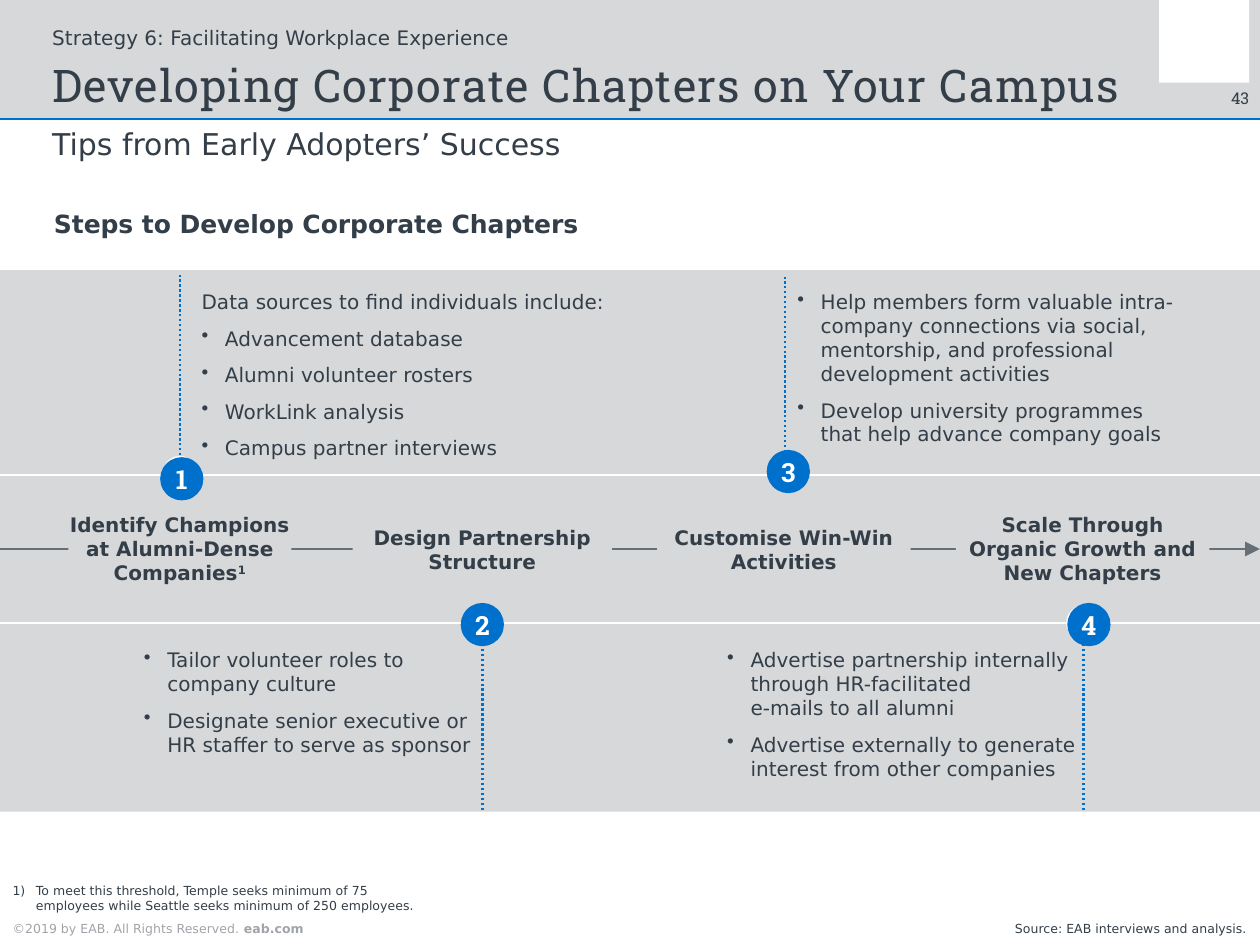
from pptx import Presentation
from pptx.dml.color import RGBColor
from pptx.enum.dml import MSO_LINE
from pptx.enum.shapes import MSO_CONNECTOR, MSO_SHAPE
from pptx.enum.text import MSO_ANCHOR, PP_ALIGN
from pptx.oxml.ns import qn
from pptx.util import Inches, Pt
from lxml import etree

RECT, OVAL = MSO_SHAPE.RECTANGLE, MSO_SHAPE.OVAL
LEFT, MID, RIGHT = PP_ALIGN.LEFT, PP_ALIGN.CENTER, PP_ALIGN.RIGHT
TOP, CENTER, BOTTOM = MSO_ANCHOR.TOP, MSO_ANCHOR.MIDDLE, MSO_ANCHOR.BOTTOM
DOTS = MSO_LINE.ROUND_DOT

THEME = {
    "sans": "DejaVu Sans", "slab": "Roboto Slab",
    "ink": "333E48", "blue": "0070CD", "gray": "D6D8DA",
    "rule": "666E76", "pale": "A0A4A9", "white": "FFFFFF",
    "tiny": 5, "page": 6.5, "body": 8, "head": 10, "badge": 10.6,
    "sub": 12, "title": 18,
}
W, H = 7, 5.25
BAND = (1.5, 3.01)
RULES = (2.64, 3.46)
AXIS = 3.05
BADGE, HALO = 0.24, 0.18
HANG = 0.13

# Each step: label runs (text, superscript), label box, badge corner,
# halo corner, dotted line (x, from, to), detail box, details (text, bullet)
STEPS = [
    {"label": [("Identify Champions\vat Alumni-Dense Companies", False), ("1", True)],
     "box": (0.38, 2.85, 1.24, 0.4), "badge": (0.89, 2.54), "halo": (0.91, 2.54),
     "stem": (1, 2.53, 1.53), "area": (1.12, 1.61, 2.3, 0.95),
     "notes": [("Data sources to find individuals include:", None),
               ("Advancement database", "•"), ("Alumni volunteer rosters", "•"),
               ("WorkLink analysis", "•"), ("Campus partner interviews", "•")]},
    {"label": [("Design Partnership Structure", False)],
     "box": (1.96, 2.92, 1.44, 0.27), "badge": (2.56, 3.35), "halo": (2.59, 3.37),
     "stem": (2.68, 4.5, 3.5), "area": (0.8, 3.6, 1.87, 0.61),
     "notes": [("Tailor volunteer roles to company culture", "•"),
               ("Designate senior executive or HR staffer to serve as sponsor", "•")]},
    {"label": [("Customise Win-Win Activities", False)],
     "box": (3.65, 2.92, 1.41, 0.27), "badge": (4.26, 2.5), "halo": (4.27, 2.54),
     "stem": (4.36, 2.54, 1.54), "area": (4.43, 1.61, 2.17, 0.88),
     "notes": [("Help members form valuable intra-company connections via social, "
                "mentorship, and professional development activities", "•"),
               ("Develop university programmes that help advance company goals", "•")]},
    {"label": [("Scale Through Organic Growth and New Chapters", False)],
     "box": (5.31, 2.85, 1.41, 0.4), "badge": (5.93, 3.35), "halo": (5.93, 3.37),
     "stem": (6.02, 4.5, 3.5), "area": (4.04, 3.6, 1.94, 0.74),
     "notes": [("Advertise partnership internally through HR-facilitated\v"
                "e-mails to all alumni", "•"),
               ("Advertise externally to generate interest from other companies", "•")]},
]

deck = Presentation()
deck.slide_width, deck.slide_height = Inches(W), Inches(H)
slide = deck.slides.add_slide(deck.slide_layouts[6])
shapes = slide.shapes


def rgb(name):
    return RGBColor.from_string(THEME[name])


def frame(shape, anchor=TOP, pad=(0, 0, 0, 0)):
    body = shape.text_frame
    body.word_wrap = True
    body.vertical_anchor = anchor
    (body.margin_left, body.margin_top,
     body.margin_right, body.margin_bottom) = [Inches(v) for v in pad]
    return body


def style(para, size="body", color="ink", face="sans", bold=False, align=LEFT):
    para.alignment = align
    font = para.font
    font.name, font.size, font.bold = THEME[face], Pt(THEME[size]), bold
    font.color.rgb = rgb(color)


def bullet(para, mark):
    props = para._p.get_or_add_pPr()
    props.set("marL", str(Inches(HANG)))
    props.set("indent", str(-Inches(HANG)))
    if mark == "1)":
        etree.SubElement(props, qn("a:buAutoNum"), type="arabicParenR")
    elif mark:
        etree.SubElement(props, qn("a:buChar"), char=mark)


def text(box, words, anchor=TOP, pad=(0, 0, 0, 0), mark=None, **look):
    shape = shapes.add_textbox(*[Inches(v) for v in box])
    para = frame(shape, anchor, pad).paragraphs[0]
    para.text = words
    if mark:
        bullet(para, mark)
    style(para, **look)
    return para


def block(kind, box, fill, edge=None):
    shape = shapes.add_shape(kind, *[Inches(v) for v in box])
    shape.shadow.inherit = False
    shape.fill.solid()
    shape.fill.fore_color.rgb = rgb(fill)
    if edge:
        shape.line.color.rgb = rgb(edge)
        shape.line.width = Pt(1)
    else:
        shape.line.fill.background()
    return shape


def line(start, end, color, width=1, dash=None, arrow=False):
    link = shapes.add_connector(MSO_CONNECTOR.STRAIGHT,
                                *[Inches(v) for v in start + end])
    link.line.color.rgb = rgb(color)
    link.line.width = Pt(width)
    if dash:
        link.line.dash_style = dash
    if arrow:
        etree.SubElement(link.line._get_or_add_ln(), qn("a:tailEnd"), type="triangle")
    etree.SubElement(link._element.spPr, qn("a:effectLst"))


# Header band with a plain emblem and the page number
block(RECT, (0, 0, W, 0.66), "gray")
block(RECT, (6.44, 0, 0.5, 0.46), "white")
line((0, 0.66), (W, 0.66), "blue", 0.75)
text((6.74, 0.49, 0.2, 0.11), "43", size="page", face="slab", align=RIGHT)

# Titles
text((0.29, 0.14, 2.78, 0.13), "Strategy 6: Facilitating Workplace Experience")
title = text((0.29, 0.34, 5.98, 0.28), "Developing Corporate Chapters on Your Campus",
             anchor=BOTTOM, size="title", face="slab")
title.line_spacing = Pt(20)
title.runs[0].font._element.set("spc", "50")
text((0.29, 0.7, 6.42, 0.2), "Tips from Early Adopters’ Success", size="sub")
text((0.3, 1.16, 3.2, 0.17), "Steps to Develop Corporate Chapters",
     size="head", bold=True)

# Timeline band, dividers and axis
block(RECT, (0, BAND[0], W, BAND[1]), "gray")
for y in RULES:
    line((0, y), (W, y), "white")
line((0, AXIS), (W, AXIS), "rule", arrow=True)

# Steps
for num, step in enumerate(STEPS, 1):
    x, low, high = step["stem"]
    line((x, low), (x, high), "blue", dash=DOTS)
    block(OVAL, step["halo"] + (HALO, HALO), "blue", "white")
    badge = block(OVAL, step["badge"] + (BADGE, BADGE), "blue")
    para = frame(badge, CENTER).paragraphs[0]
    para.text = str(num)
    style(para, "badge", "white", "slab", True, MID)

    label = block(RECT, step["box"], "gray")
    para = frame(label).paragraphs[0]
    for words, raised in step["label"]:
        for i, part in enumerate(words.split("\v")):
            if i:
                para.add_line_break()
            run = para.add_run()
            run.text = part
            if raised:
                run.font._element.set("baseline", "30000")
    style(para, bold=True, align=MID)

    body = frame(shapes.add_textbox(*[Inches(v) for v in step["area"]]))
    for i, (words, mark) in enumerate(step["notes"]):
        para = body.add_paragraph() if i else body.paragraphs[0]
        para.text = words
        bullet(para, mark)
        style(para)
        if i:
            para.space_before = Pt(5)

# Footnote, copyright and source
text((0, 4.82, 2.4, 0.25), "To meet this threshold, Temple seeks minimum of 75 "
     "employees while Seattle seeks minimum of 250 employees.",
     anchor=BOTTOM, pad=(0.07, 0, 0, 0), mark="1)", size="tiny")
rights = text((0, 5.12, 2.27, 0.13), "©2019 by EAB. All Rights Reserved. ",
              anchor=BOTTOM, pad=(0.07, 0, 0.07, 0.05), size="tiny", color="pale")
site = rights.add_run()
site.text = "eab.com"
site.font.bold = True
text((4.47, 5.12, 2.53, 0.13), "Source: EAB interviews and analysis.",
     anchor=BOTTOM, pad=(0, 0, 0.07, 0.05), size="tiny", align=RIGHT)

deck.save("out.pptx")
